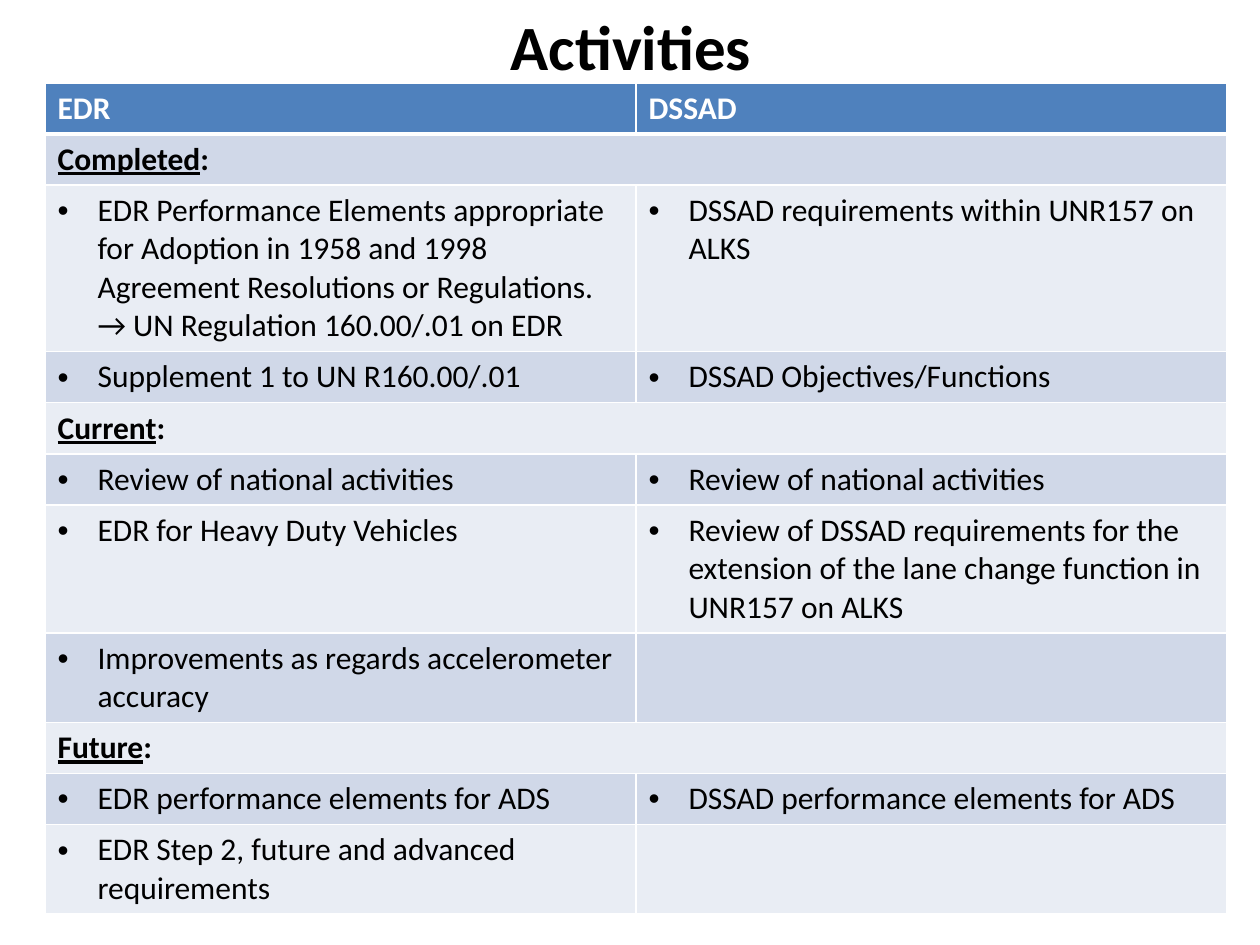
from lxml.etree import SubElement
from pptx import Presentation
from pptx.dml.color import RGBColor
from pptx.enum.text import MSO_ANCHOR, PP_ALIGN
from pptx.oxml.ns import qn
from pptx.util import Pt

PX = 914400 / 126
INDENT = 40


def px(n):
    return int(n * PX)


def style(font, color, **values):
    for name, value in {"name": "Calibri", "size": Pt(18), **values}.items():
        setattr(font, name, value)
    font.color.rgb = RGBColor.from_string(color)


prs = Presentation()
prs.slide_width, prs.slide_height = px(1260), px(945)
s = prs.slides.add_slide(prs.slide_layouts[5])

title = s.shapes.title
title.left, title.top, title.width, title.height = px(1), px(16), px(1260), px(58)
tf = title.text_frame
tf.text = "Activities"
tf.vertical_anchor = MSO_ANCHOR.MIDDLE
tf.paragraphs[0].alignment = PP_ALIGN.CENTER
style(tf.paragraphs[0].runs[0].font, "000000", size=Pt(36), bold=True)

rows = [
    ("EDR", "DSSAD"),
    ("Completed",),
    ("EDR Performance Elements appropriate for Adoption in 1958 and 1998 "
     "Agreement Resolutions or Regulations.\v→ UN Regulation 160.00/.01 on EDR",
     "DSSAD requirements within UNR157 on ALKS"),
    ("Supplement 1 to UN R160.00/.01", "DSSAD Objectives/Functions"),
    ("Current",),
    ("Review of national activities", "Review of national activities"),
    ("EDR for Heavy Duty Vehicles",
     "Review of DSSAD requirements for the extension of the lane change "
     "function in UNR157 on ALKS"),
    ("Improvements as regards accelerometer accuracy", ""),
    ("Future",),
    ("EDR performance elements for ADS", "DSSAD performance elements for ADS"),
    ("EDR Step 2, future and advanced requirements", ""),
]

frame = s.shapes.add_table(len(rows), 2, px(45), px(83), px(1181), px(824))
table = frame.table
for col in table.columns:
    col.width = px(591)
for row in table.rows:
    row.height = px(51)
frame.height = px(824)

for i, texts in enumerate(rows):
    header, section = i == 0, len(texts) == 1
    if section:
        table.cell(i, 0).merge(table.cell(i, 1))
    for j in range(2):
        cell = table.cell(i, j)
        tcPr = cell._tc.get_or_add_tcPr()
        for side in "LRTB":
            thick = (header and side == "B") or (i == 1 and side == "T")
            ln = SubElement(tcPr, qn(f"a:ln{side}"), w=str(Pt(3 if thick else 1)))
            SubElement(SubElement(ln, qn("a:solidFill")), qn("a:srgbClr"), val="FFFFFF")
        cell.fill.solid()
        band = "D0D8E8" if i % 2 else "E9EDF4"
        cell.fill.fore_color.rgb = RGBColor.from_string("4F81BD" if header else band)

    for j, text in enumerate(texts):
        if not text:
            continue
        p = table.cell(i, j).text_frame.paragraphs[0]
        p.text = text
        if section:
            p.add_run().text = ":"
        for r in p.runs:
            style(r.font, "FFFFFF" if header else "000000",
                  bold=header or section, underline=section and r.text != ":")
        if header:
            continue
        p.space_before = Pt(6.4)
        if not section:
            pPr = p._p.get_or_add_pPr()
            pPr.set("marL", str(px(INDENT)))
            pPr.set("indent", str(-px(INDENT)))
            SubElement(SubElement(pPr, qn("a:buClr")), qn("a:srgbClr"), val="000000")
            SubElement(pPr, qn("a:buFont"), typeface="Arial")
            SubElement(pPr, qn("a:buChar"), char="•")

prs.save("out.pptx")
